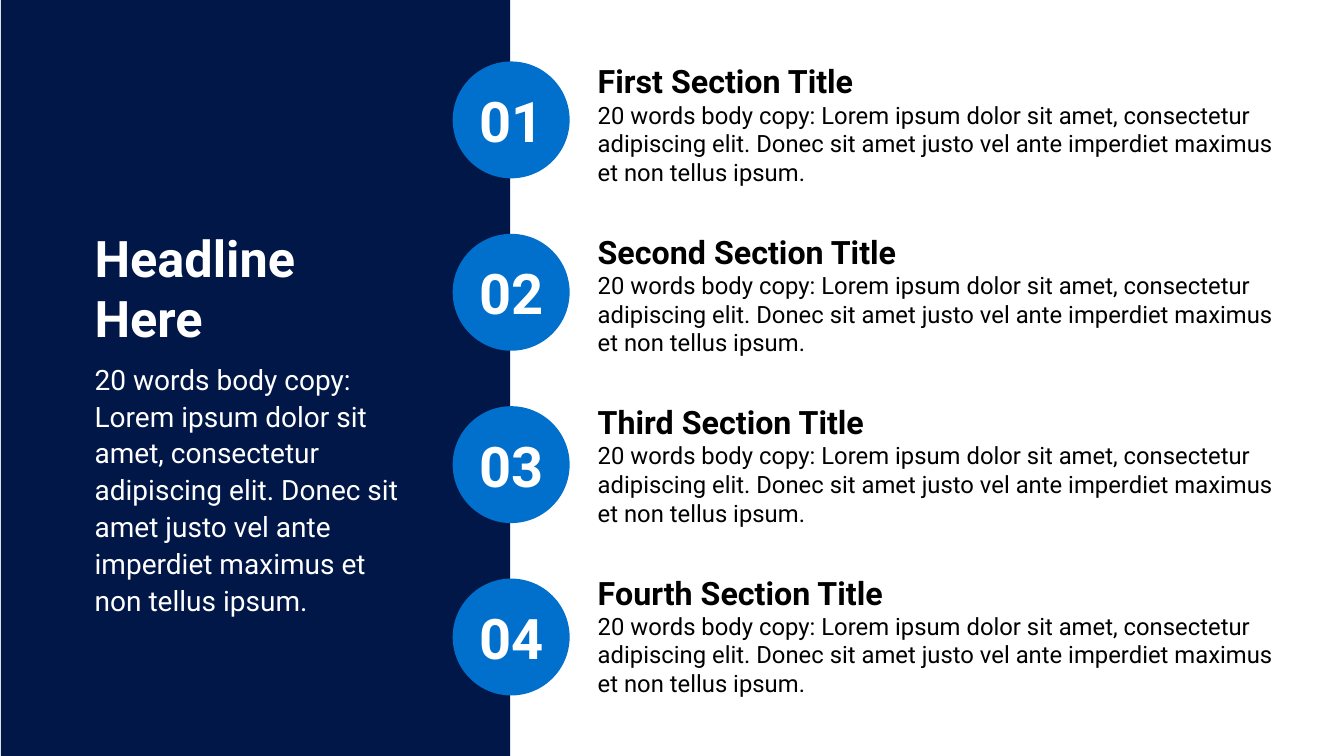
from pptx import Presentation
from pptx.dml.color import RGBColor
from pptx.enum.shapes import MSO_SHAPE
from pptx.enum.text import MSO_ANCHOR, PP_ALIGN
from pptx.util import Inches, Pt

RECT, OVAL = MSO_SHAPE.RECTANGLE, MSO_SHAPE.OVAL
MIDDLE, CENTER = MSO_ANCHOR.MIDDLE, PP_ALIGN.CENTER

NAVY = RGBColor(0x00, 0x17, 0x48)
BLUE = RGBColor(0x00, 0x70, 0xCC)
WHITE = RGBColor(0xFF, 0xFF, 0xFF)
BLACK = RGBColor(0x00, 0x00, 0x00)

FONT = "Roboto"
BODY = ("20 words body copy: Lorem ipsum dolor sit amet, consectetur adipiscing elit. "
        "Donec sit amet justo vel ante imperdiet maximus et non tellus ipsum.")
SECTIONS = ["First Section Title", "Second Section Title",
            "Third Section Title", "Fourth Section Title"]


def add_filled(slide, kind, x, y, w, h, color):
    sp = slide.shapes.add_shape(kind, Inches(x), Inches(y), Inches(w), Inches(h))
    sp.shadow.inherit = False
    sp.fill.solid()
    sp.fill.fore_color.rgb = color
    sp.line.fill.background()
    return sp


def add_textbox(slide, x, y, w, h):
    tf = slide.shapes.add_textbox(Inches(x), Inches(y), Inches(w), Inches(h)).text_frame
    tf.word_wrap = True
    return tf


def write(p, text, size, color, bold=False, **formats):
    """Add a run to the paragraph and apply the paragraph formats."""
    r = p.add_run()
    r.text = text
    for name, value in {"name": FONT, "size": Pt(size), "bold": bold}.items():
        setattr(r.font, name, value)
    r.font.color.rgb = color
    for name, value in formats.items():
        setattr(p, name, value)


def add_headline_panel(slide, x, y, w, h):
    add_filled(slide, RECT, x, y, w, h, NAVY)
    left, width = x + 0.83, 3.32
    headline = add_textbox(slide, left, y + 2.2, width, 1.31)
    write(headline.paragraphs[0], "Headline Here", 36, WHITE, bold=True)
    body = add_textbox(slide, left, y + 3.51, width, 2.93)
    write(body.paragraphs[0], BODY, 20, WHITE,
          line_spacing=1.1, space_before=Pt(4), space_after=Pt(6))


def add_badges(slide, x, y, size, pitch):
    """Place one numbered circle per section, pitch apart."""
    for i in range(len(SECTIONS)):
        sp = add_filled(slide, OVAL, x, y + i * pitch, size, size, BLUE)
        tf = sp.text_frame
        tf.word_wrap = False
        tf.vertical_anchor = MIDDLE
        write(tf.paragraphs[0], f"{i + 1:02d}", 40, WHITE, bold=True, alignment=CENTER)


def add_sections(slide, x, y, w, h, pitch):
    """Place one titled text block per section, pitch apart."""
    for i, title in enumerate(SECTIONS):
        tf = add_textbox(slide, x, y + i * pitch, w, h)
        tf.vertical_anchor = MIDDLE
        write(tf.paragraphs[0], title, 23, BLACK, bold=True)
        write(tf.add_paragraph(), BODY, 17, BLACK)


def main():
    prs = Presentation()
    prs.slide_width, prs.slide_height = Inches(13.33), Inches(7.5)
    slide = prs.slides.add_slide(prs.slide_layouts[6])
    add_headline_panel(slide, 0.01, 0, 5.05, 7.5)
    add_badges(slide, 4.49, 0.61, 1.16, pitch=1.71)
    add_sections(slide, 5.83, 0.53, 7.01, 1.4, pitch=1.69)
    prs.save("out.pptx")


if __name__ == "__main__":
    main()
